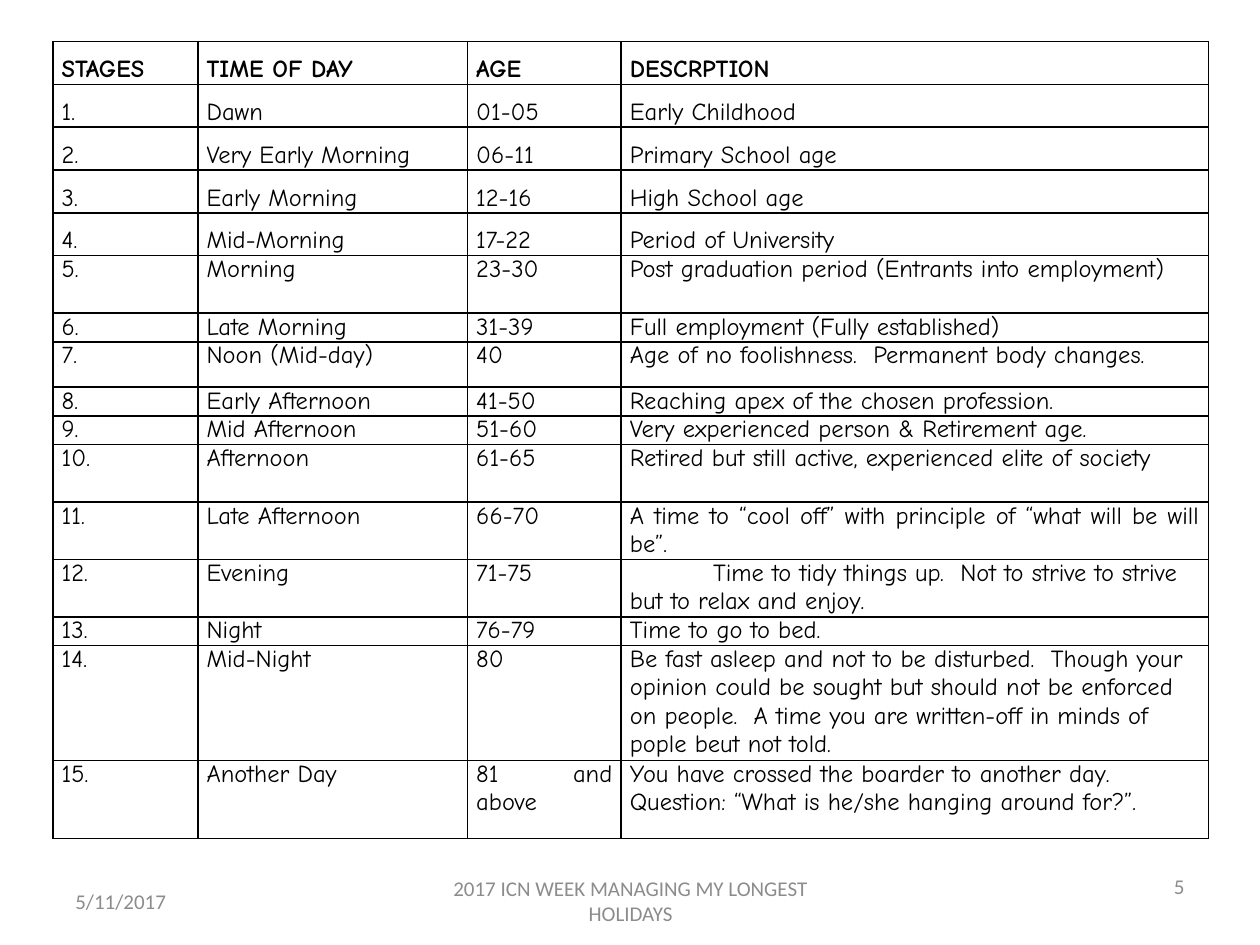
from lxml.etree import SubElement
from pptx import Presentation
from pptx.dml.color import RGBColor
from pptx.enum.text import MSO_ANCHOR, PP_ALIGN
from pptx.oxml.ns import qn
from pptx.util import Inches, Pt

BLACK = RGBColor(0x00, 0x00, 0x00)
GRAY = RGBColor(0x8C, 0x8C, 0x8C)
GRID_COLUMNS, GRID_ROWS = 1000, 750

COLUMN_WIDTHS = [115, 214, 122, 466]
TALL, LINE = 34, 22.8
HEADER = ["STAGES", "TIME OF DAY", "AGE", "DESCRPTION"]
STAGES = [
    (TALL, "Dawn", "01-05", "Early Childhood"),
    (TALL, "Very Early Morning", "06-11", "Primary School age"),
    (TALL, "Early Morning", "12-16", "High School age"),
    (TALL, "Mid-Morning", "17-22", "Period of University"),
    (2 * LINE, "Morning", "23-30", "Post graduation period (Entrants into employment)"),
    (LINE, "Late Morning", "31-39", "Full employment (Fully established)"),
    (36, "Noon (Mid-day)", "40", "Age of no foolishness.  Permanent body changes."),
    (LINE, "Early Afternoon", "41-50", "Reaching apex of the chosen profession."),
    (LINE, "Mid Afternoon", "51-60", "Very experienced person & Retirement age."),
    (2 * LINE, "Afternoon", "61-65", "Retired but still active, experienced elite of society"),
    (2 * LINE, "Late Afternoon", "66-70",
     "A time to “cool off” with principle of “what will be will be”."),
    (2 * LINE, "Evening", "71-75",
     "Time to tidy things up.  Not to strive to strive but to relax and enjoy."),
    (LINE, "Night", "76-79", "Time to go to bed."),
    (4 * LINE, "Mid-Night", "80",
     "Be fast asleep and not to be disturbed.  Though your opinion could be sought "
     "but should not be enforced on people.  A time you are written-off in minds of "
     "pople beut not told."),
    (62, "Another Day", "81 and above",
     "You have crossed the boarder to another day.\n"
     "Question: “What is he/she hanging around for?”."),
]
LEFT_ALIGNED_STAGES = {7, 9, 12, 14}
INDENTED_STAGE = 12


class SlideBuilder:
    table_font, footer_font = "Comic Neue", "Calibri"
    table_size, footer_size = Pt(14), Pt(12)
    cell_margin = Inches(0.07)
    border_width = Pt(1)

    def __init__(self, deck):
        self.deck = deck
        self.page = deck.slides.add_slide(deck.slide_layouts[6])

    def across(self, columns):
        return round(self.deck.slide_width * columns / GRID_COLUMNS)

    def down(self, rows):
        return round(self.deck.slide_height * rows / GRID_ROWS)

    def place(self, left, top, width, height):
        return self.across(left), self.down(top), self.across(width), self.down(height)

    def add_span(self, para, text, font, size, color, bold=False):
        span = para.add_run()
        span.text = text
        span.font.name = font
        span.font.size = size
        span.font.bold = bold
        span.font.color.rgb = color

    def border(self, cell):
        properties = cell._tc.get_or_add_tcPr()
        for position, side in enumerate(("a:lnL", "a:lnR", "a:lnT", "a:lnB")):
            line = SubElement(properties, qn(side), w=str(self.border_width))
            fill = SubElement(line, qn("a:solidFill"))
            SubElement(fill, qn("a:srgbClr"), val=str(BLACK))
            properties.insert(position, line)

    def cell(self, cell, text, align, spacing, bold, indent):
        cell.fill.background()
        cell.margin_left = cell.margin_right = self.cell_margin
        cell.margin_top = cell.margin_bottom = 0
        self.border(cell)
        for index, line in enumerate(text.split("\n")):
            frame = cell.text_frame
            para = frame.add_paragraph() if index else frame.paragraphs[0]
            para.alignment = align
            para.line_spacing = spacing
            if indent:
                para._p.get_or_add_pPr().set("indent", str(indent))
            self.add_span(para, line, self.table_font, self.table_size, BLACK, bold)

    def table(self, left, top, widths, heights, rows):
        area = self.place(left, top, sum(widths), sum(heights))
        table = self.page.shapes.add_table(len(rows), len(widths), *area).table
        table.first_row = table.horz_banding = False
        for column, width in zip(table.columns, widths):
            column.width = self.across(width)
        for stage, (row, height, texts) in enumerate(zip(table.rows, heights, rows)):
            row.height = self.down(height)
            spacing = 1.5 if height == TALL else 1.0
            for index, (cell, text) in enumerate(zip(row.cells, texts)):
                description = index == len(widths) - 1
                left_aligned = description and stage in LEFT_ALIGNED_STAGES
                align = PP_ALIGN.LEFT if left_aligned else PP_ALIGN.JUSTIFY
                indented = description and stage == INDENTED_STAGE
                indent = self.across(66) if indented else 0
                self.cell(cell, text, align, spacing, stage == 0, indent)

    def footer(self, left, top, width, text, align):
        box = self.page.shapes.add_textbox(*self.place(left, top, width, 40))
        frame = box.text_frame
        frame.word_wrap = True
        frame.vertical_anchor = MSO_ANCHOR.MIDDLE
        para = frame.paragraphs[0]
        para.alignment = align
        self.add_span(para, text, self.footer_font, self.footer_size, GRAY)


def main():
    deck = Presentation()
    deck.slide_width, deck.slide_height = Inches(10), Inches(7.5)
    builder = SlideBuilder(deck)
    heights = [TALL] + [height for height, *_ in STAGES]
    rows = [HEADER] + [
        [f"{number}.", *texts] for number, (_, *texts) in enumerate(STAGES, 1)
    ]
    builder.table(42, 33, COLUMN_WIDTHS, heights, rows)
    builder.footer(50, 695, 233, "5/11/2017", PP_ALIGN.LEFT)
    builder.footer(717, 683, 233, "5", PP_ALIGN.RIGHT)
    builder.footer(342, 695, 317, "2017 ICN WEEK MANAGING MY LONGEST HOLIDAYS",
                   PP_ALIGN.CENTER)
    deck.save("out.pptx")


if __name__ == "__main__":
    main()
